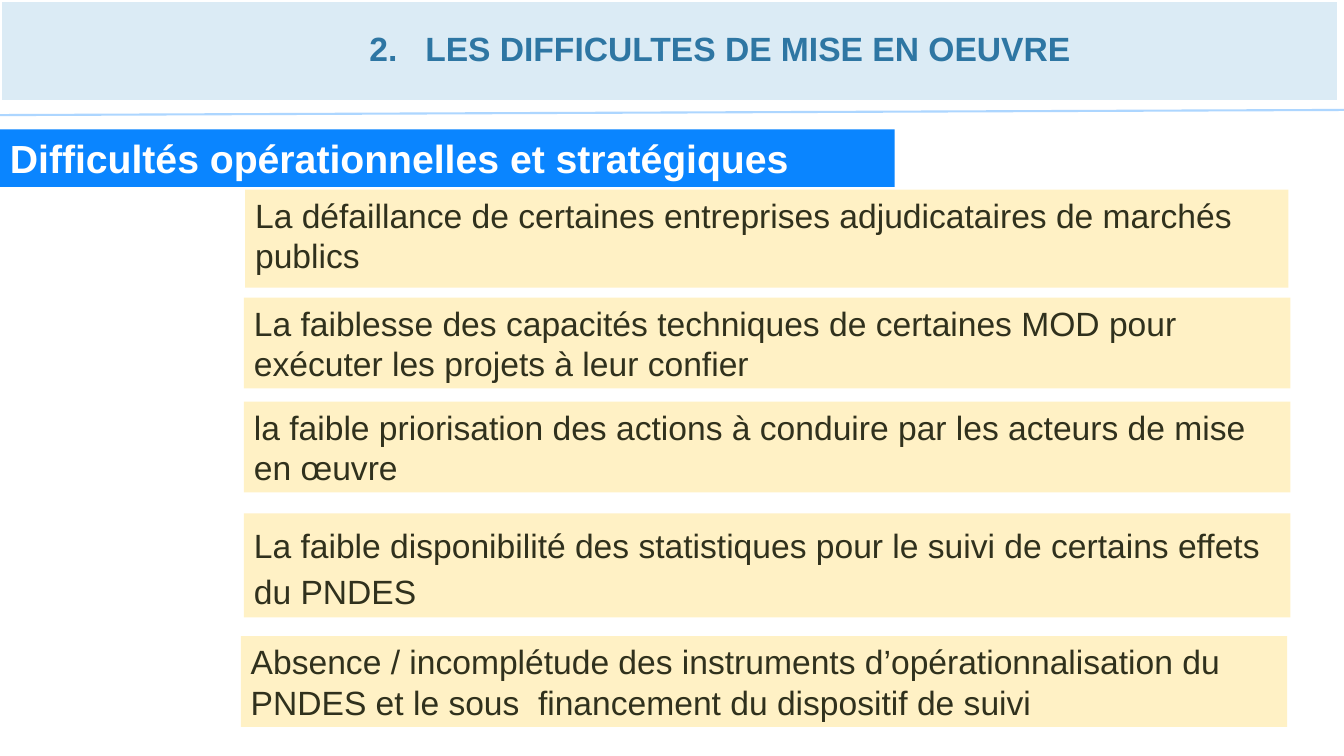
from lxml.etree import SubElement
from pptx import Presentation
from pptx.dml.color import RGBColor
from pptx.enum.shapes import MSO_CONNECTOR, MSO_SHAPE
from pptx.enum.text import MSO_ANCHOR, PP_ALIGN
from pptx.oxml.ns import qn
from pptx.util import Cm, Pt


def color(code):
    return RGBColor.from_string(code)


class Deck:
    font = "Arial"
    dark, white, blue = "30311D", "FFFFFF", "0A85FF"
    cream, pale, sky, steel = "FFF1C5", "DBEBF5", "ADD6FF", "2E76A3"

    def __init__(self, slide):
        self.slide = slide

    def label(self, frame, text, size, ink, bold=False):
        frame.word_wrap = True
        par = frame.paragraphs[0]
        par.text = text
        par.alignment = PP_ALIGN.LEFT
        par.font.name = self.font
        par.font.size = Pt(size)
        par.font.bold = bold
        par.font.color.rgb = color(ink)
        return par

    def box(self, left, top, width, height, fill, edge=None):
        shape = self.slide.shapes.add_shape(
            MSO_SHAPE.RECTANGLE, Cm(left), Cm(top), Cm(width), Cm(height))
        shape.shadow.inherit = False
        shape.fill.solid()
        shape.fill.fore_color.rgb = color(fill)
        if edge:
            shape.line.color.rgb = color(edge)
            shape.line.width = Pt(2.25)
        else:
            shape.line.fill.background()
        shape.text_frame.vertical_anchor = MSO_ANCHOR.TOP
        return shape.text_frame

    def rule(self, left, top, right, end):
        line = self.slide.shapes.add_connector(
            MSO_CONNECTOR.STRAIGHT, Cm(left), Cm(top), Cm(right), Cm(end))
        line.line.color.rgb = color(self.sky)
        line.line.width = Pt(1.5)
        SubElement(line._element.spPr, qn("a:effectLst"))

    def title(self, left, top, width, height, text):
        frame = self.slide.shapes.add_textbox(
            Cm(left), Cm(top), Cm(width), Cm(height)).text_frame
        frame.vertical_anchor = MSO_ANCHOR.MIDDLE
        par = self.label(frame, text, 24, self.steel, True)
        # Hanging indent: the tab after the number stops at the margin
        props = par._p.get_or_add_pPr()
        props.set("marL", str(Cm(7.42)))
        props.set("indent", str(Cm(-1.41)))


def main():
    show = Presentation()
    show.slide_width, show.slide_height = Cm(33.87), Cm(19.05)
    deck = Deck(show.slides.add_slide(show.slide_layouts[6]))

    # Header band and rule
    deck.box(0, 0, 33.73, 2.57, deck.pale, deck.white)
    deck.rule(0, 2.9, 33.87, 2.77)

    # Difficulties: left, top, width, height, text
    cards = [
        (6.18, 4.78, 26.29, 2.47, "La défaillance de certaines entreprises "
         "adjudicataires de marchés publics"),
        (6.15, 7.5, 26.37, 2.29, "La faiblesse des capacités techniques de "
         "certaines MOD pour exécuter les projets à leur confier"),
        (6.15, 10.12, 26.37, 2.29, "la faible priorisation des actions à "
         "conduire par les acteurs de mise en œuvre"),
        (6.15, 12.94, 26.37, 2.62, "La faible disponibilité des statistiques "
         "pour le suivi de certains effets du PNDES"),
        (6.07, 16.03, 26.37, 2.29, "Absence / incomplétude des instruments "
         "d’opérationnalisation du PNDES et le sous  financement du "
         "dispositif de suivi"),
    ]
    pars = [deck.label(deck.box(*place, deck.cream), text, 24, deck.dark)
            for *place, text in cards]
    pars[3].line_spacing = 1.15
    pars[3].space_after = Pt(10)

    # Section banner and title
    banner = deck.box(0, 3.26, 22.55, 1.45, deck.blue)
    deck.label(banner, "Difficultés opérationnelles et stratégiques",
               28, deck.white, True)
    deck.title(3.05, -0.46, 30.33, 3.33,
               "2.\tLES DIFFICULTES DE MISE EN OEUVRE")

    show.save("out.pptx")


if __name__ == "__main__":
    main()
